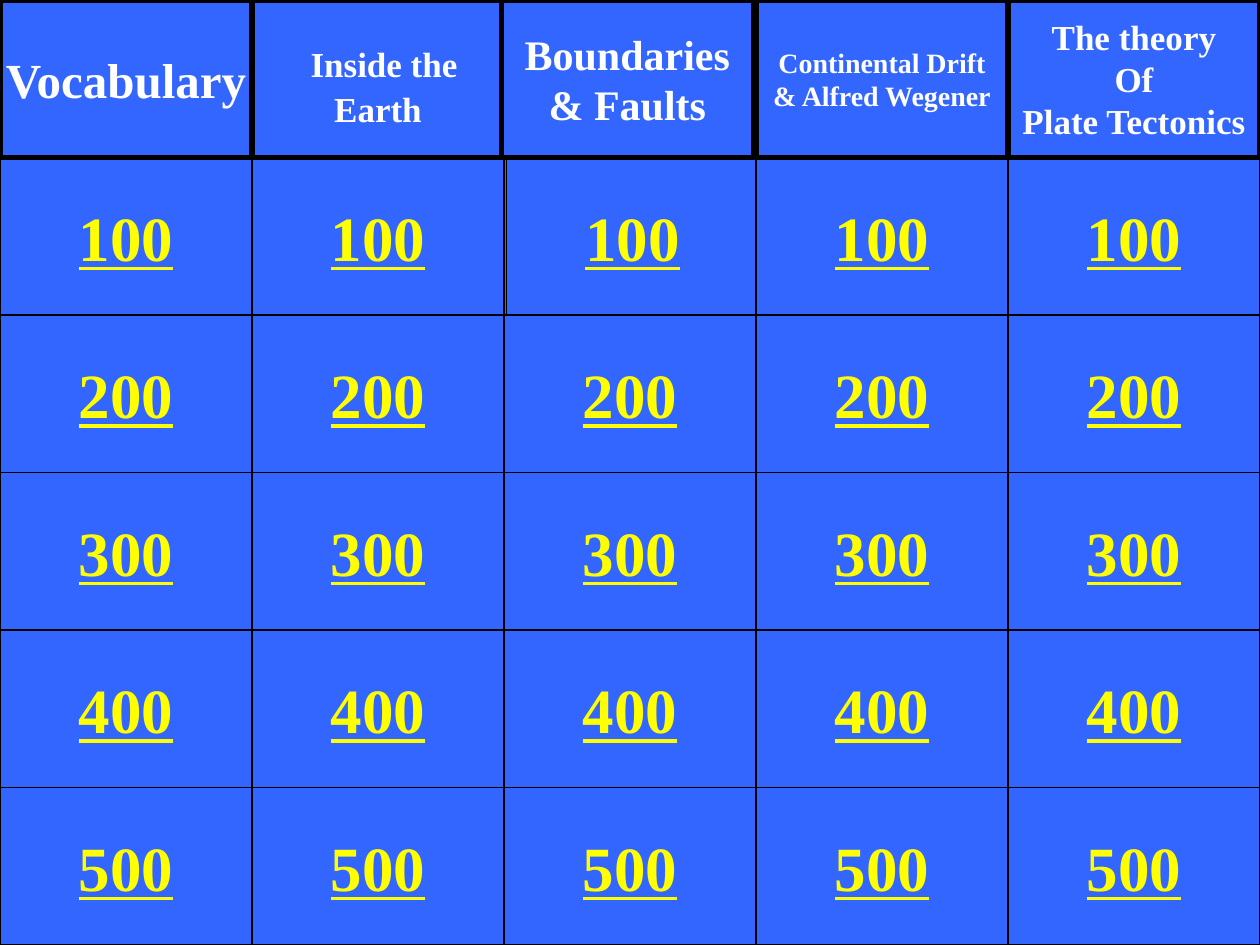
from dataclasses import dataclass

from pptx import Presentation
from pptx.dml.color import RGBColor
from pptx.enum.shapes import MSO_SHAPE
from pptx.enum.text import MSO_ANCHOR, PP_ALIGN
from pptx.util import Pt


@dataclass(frozen=True)
class Theme:
    font: str = "Times New Roman"
    blue: str = "3366FF"
    black: str = "000000"
    white: str = "FFFFFF"
    gold: str = "FFFF00"
    score: int = 36
    large: int = 28
    mid: int = 24
    small: int = 20
    tiny: int = 16


def color(code):
    return RGBColor.from_string(code)


def write(para, text, *, font, size, ink, line=False):
    """Add one bold run to a centred paragraph."""
    para.alignment = PP_ALIGN.CENTER
    run = para.add_run()
    run.text = text
    face = run.font
    face.name, face.size, face.bold = font, Pt(size), True
    face.underline = line
    face.color.rgb = color(ink)


class Board:
    def __init__(self, deck, theme):
        self.theme = theme
        self.slide = deck.slides.add_slide(deck.slide_layouts[6])
        back = self.slide.background.fill
        back.solid()
        back.fore_color.rgb = color(theme.blue)

    def box(self, kind, left, top, edge):
        """Add a blue cell and return its text frame."""
        cell = self.slide.shapes.add_shape(
            kind, Pt(left), Pt(top), Pt(WIDE), Pt(HIGH))
        cell.shadow.inherit = False
        cell.fill.solid()
        cell.fill.fore_color.rgb = color(self.theme.blue)
        cell.line.color.rgb = color(self.theme.black)
        cell.line.width = Pt(edge)
        frame = cell.text_frame
        frame.word_wrap = False
        frame.vertical_anchor = MSO_ANCHOR.MIDDLE
        return frame

    def score(self, left, top, value):
        frame = self.box(MSO_SHAPE.ACTION_BUTTON_CUSTOM, left, top, 0.75)
        write(frame.paragraphs[0], str(value), font=self.theme.font,
              size=self.theme.score, ink=self.theme.gold, line=True)

    def head(self, left, lines, size, lead=None):
        """Add a heading; lead is the size of a space before its text."""
        frame = self.box(MSO_SHAPE.RECTANGLE, left, 0, 3)
        look = {"font": self.theme.font, "ink": self.theme.white}
        if lead:
            write(frame.paragraphs[0], " ", size=lead, **look)
        for row, text in enumerate(lines):
            para = frame.add_paragraph() if row else frame.paragraphs[0]
            write(para, text, size=size, **look)


# Grid: five columns, one heading row and five score rows
COLS, ROWS = 5, 5
WIDE, HIGH = 144, 90
NUDGE = 1.5  # the middle column's heading and first score sit off the grid
MIDDLE = 2


def main():
    theme = Theme()
    deck = Presentation()
    deck.slide_width, deck.slide_height = Pt(720), Pt(540)
    board = Board(deck, theme)

    # Score buttons
    for col in range(COLS):
        for row in range(1, ROWS + 1):
            shift = NUDGE if (col, row) == (MIDDLE, 1) else 0
            board.score(col * WIDE + shift, row * HIGH, row * 100)

    # Headings
    heads = [
        (["Vocabulary"], theme.large, None),
        (["Inside the", "Earth"], theme.small, theme.large),
        (["Boundaries", "& Faults"], theme.mid, None),
        (["Continental Drift", "& Alfred Wegener"], theme.tiny, None),
        (["The theory", "Of", "Plate Tectonics"], theme.small, None),
    ]
    for col, (lines, size, lead) in enumerate(heads):
        shift = NUDGE if col == MIDDLE else 0
        board.head(col * WIDE - shift, lines, size, lead)

    deck.save("out.pptx")


if __name__ == "__main__":
    main()
